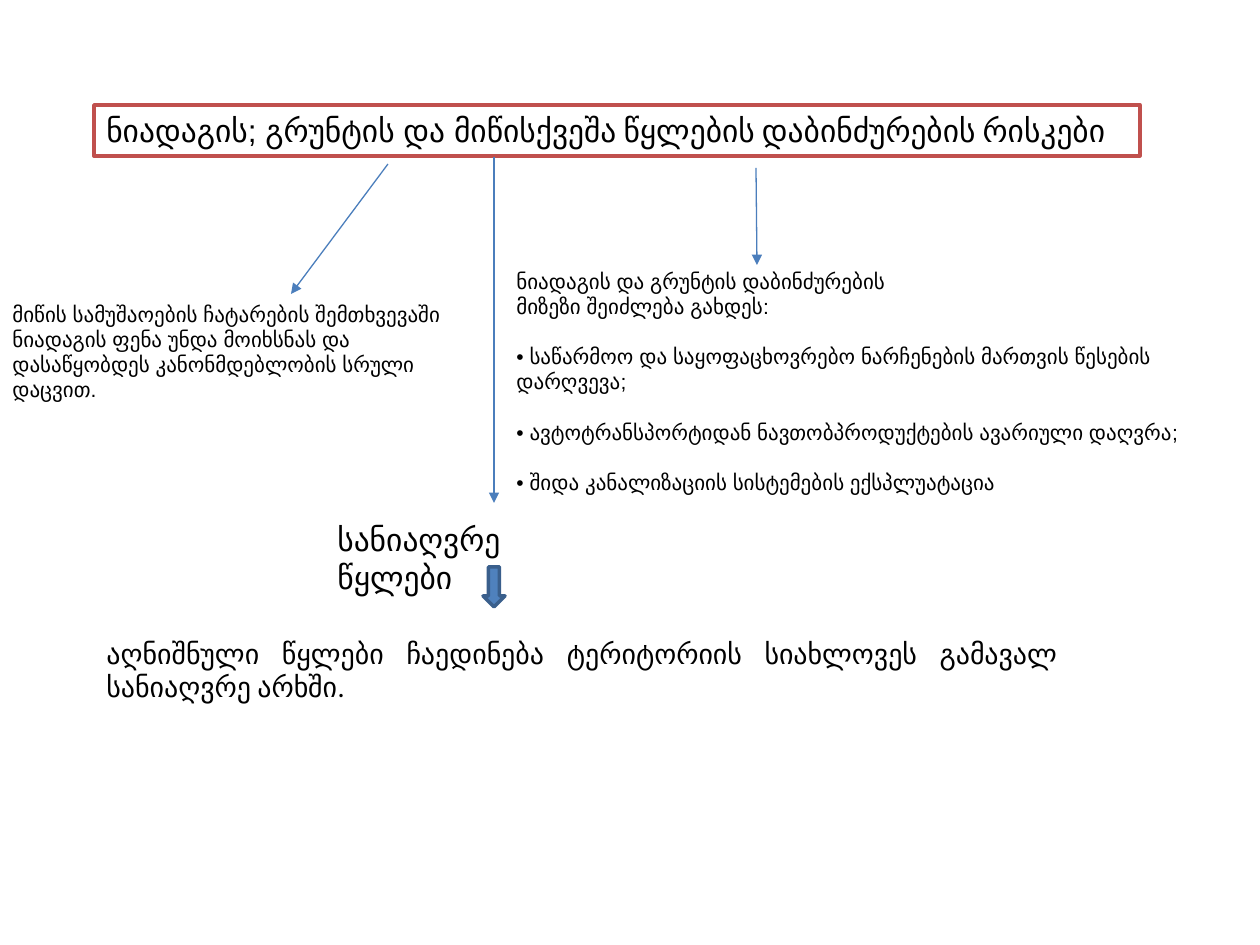
from pptx import Presentation
from pptx.dml.color import RGBColor
from pptx.enum.shapes import MSO_CONNECTOR as Connector, MSO_SHAPE as Shape
from pptx.enum.text import MSO_ANCHOR as Anchor, PP_ALIGN as Align
from pptx.oxml.ns import qn
from pptx.util import Pt
from lxml.etree import SubElement

SCALE = 914400 / 126
COLORS = {
    "text": "000000",
    "paper": "FFFFFF",
    "frame": "C0504D",
    "arrow": "4B7EBC",
    "block": "4F81BD",
    "block_edge": "3A5F8C",
}


def px(*lengths):
    return [round(length * SCALE) for length in lengths]


def color(name):
    return RGBColor.from_string(COLORS[name])


class RiskSlide:
    def __init__(self, deck):
        self.slide = deck.slides.add_slide(deck.slide_layouts[6])

    def set_text(self, frame, paragraphs, size, font="Arial", align=Align.LEFT, gap=0, gap_from=0):
        frame.word_wrap = True
        frame.vertical_anchor = Anchor.TOP
        for index, content in enumerate(paragraphs):
            paragraph = frame.paragraphs[0] if index == 0 else frame.add_paragraph()
            paragraph.alignment = align
            paragraph.font.size = Pt(size)
            paragraph.font.color.rgb = color("text")
            if gap and index >= gap_from:
                paragraph.space_before = Pt(gap)
            if isinstance(content, str):
                paragraph.font.name = font
                content = [(content, None)]
            for words, face in content:
                run = paragraph.add_run()
                run.text = words
                if face:
                    run.font.name = face

    def text(self, box, paragraphs, size, **style):
        self.set_text(self.slide.shapes.add_textbox(*px(*box)).text_frame, paragraphs, size, **style)

    def shape(self, kind, box, fill, line):
        shape = self.slide.shapes.add_shape(kind, *px(*box))
        shape.shadow.inherit = False
        shape.fill.solid()
        shape.fill.fore_color.rgb = color(fill)
        shape.line.color.rgb = color(line)
        shape.line.width = Pt(2)
        return shape

    def arrow(self, start, end):
        arrow = self.slide.shapes.add_connector(Connector.STRAIGHT, *px(*start, *end))
        arrow.line.color.rgb = color("arrow")
        arrow.line.width = Pt(0.75)
        properties = arrow._element.spPr
        SubElement(properties.get_or_add_ln(), qn("a:tailEnd"), type="triangle")
        SubElement(properties, qn("a:effectLst"))


def main():
    deck = Presentation()
    deck.slide_width, deck.slide_height = px(1260, 945)
    risks = RiskSlide(deck)

    title = risks.shape(Shape.RECTANGLE, (94, 105, 1046, 51), "paper", "frame")
    risks.set_text(title.text_frame, [[
        ("ნიადაგის; გრუნტის და ", "Arial"),
        ("მიწისქვეშა წყლების დაბინძურების რისკები", "Calibri"),
    ]], 18)

    risks.text((0, 295, 494, 89), [
        "მიწის სამუშაოების ჩატარების შემთხვევაში ნიადაგის ფენა უნდა მოიხსნას და "
        "დასაწყობდეს კანონმდებლობის სრული დაცვით.",
    ], 12)
    risks.text((504, 262, 725, 217), [
        "ნიადაგის და გრუნტის დაბინძურების",
        "მიზეზი შეიძლება გახდეს:",
        "• საწარმოო და საყოფაცხოვრებო ნარჩენების მართვის წესების დარღვევა;",
        "• ავტოტრანსპორტიდან ნავთობპროდუქტების ავარიული დაღვრა;",
        "• შიდა კანალიზაციის სისტემების ექსპლუატაცია",
    ], 12, gap=14.4, gap_from=2)
    risks.text((325, 514, 295, 51), ["სანიაღვრე წყლები"], 18)
    risks.text((94, 630, 977, 81), [
        "აღნიშნული წყლები ჩაედინება ტერიტორიის სიახლოვეს გამავალ სანიაღვრე არხში.",
    ], 16, font="Calibri", align=Align.JUSTIFY)

    for start, end in (
        ((388, 164), (291, 294)),
        ((756, 168), (757, 265)),
        ((494, 157), (494, 503)),
    ):
        risks.arrow(start, end)
    risks.shape(Shape.DOWN_ARROW, (483, 567, 22, 40), "block", "block_edge")

    deck.save("out.pptx")


if __name__ == "__main__":
    main()
